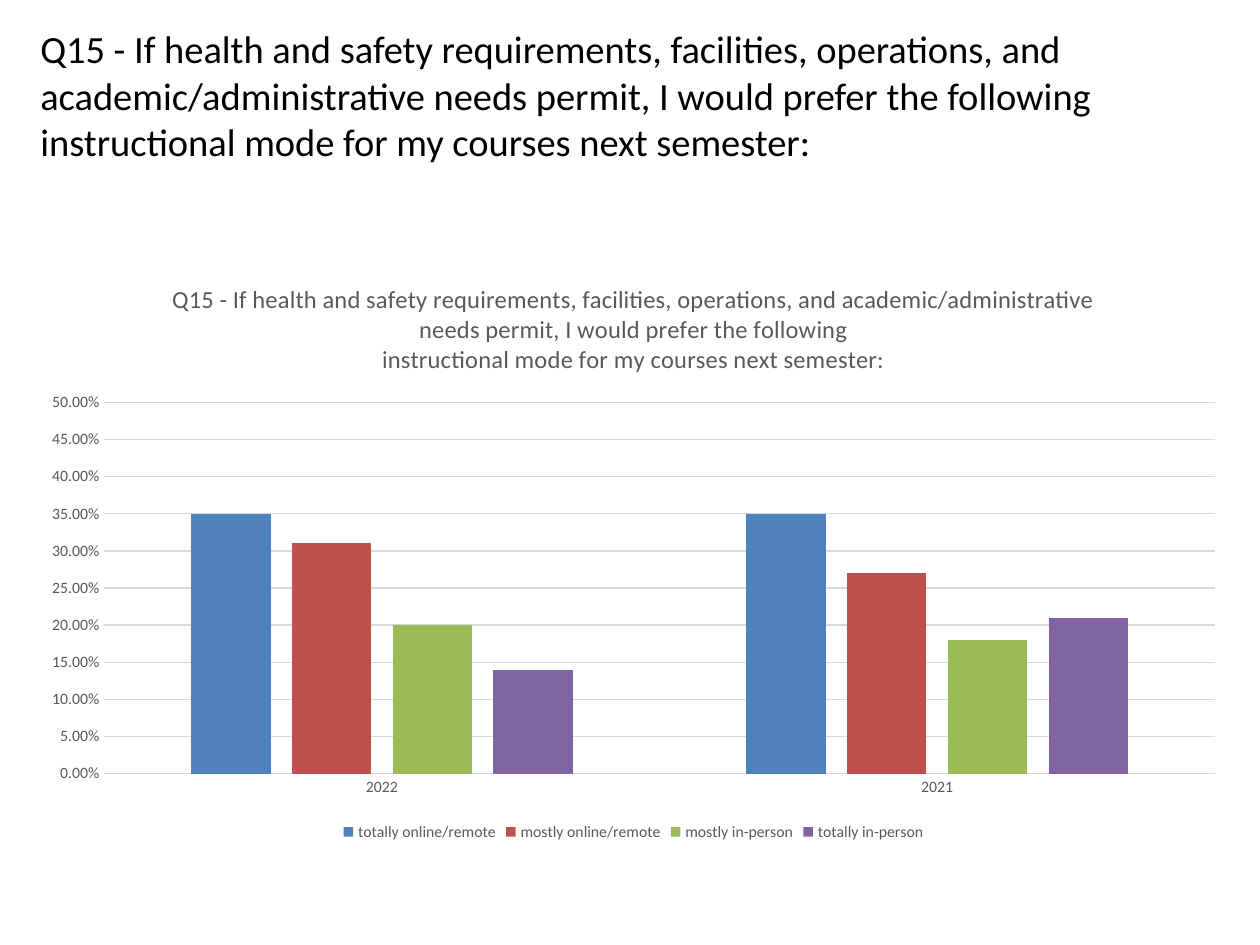
"""Build the slide on preferred instructional mode with its clustered column chart."""
from pptx import Presentation
from pptx.chart.data import CategoryChartData
from pptx.dml.color import RGBColor
from pptx.enum.chart import XL_CHART_TYPE, XL_LEGEND_POSITION, XL_TICK_MARK
from pptx.enum.text import PP_ALIGN
from pptx.util import Pt

QUESTION_START = ("Q15 - If health and safety requirements, facilities, operations, and "
                  "academic/administrative needs permit, I would prefer the following")
QUESTION_END = "instructional mode for my courses next semester:"
YEARS = ["2022", "2021"]
MODES = [
    ("totally online/remote", (0.35, 0.35), "4F81BD"),
    ("mostly online/remote", (0.31, 0.27), "C0504D"),
    ("mostly in-person", (0.2, 0.18), "9BBB59"),
    ("totally in-person", (0.14, 0.21), "8064A2"),
]
FONT, BLACK, GRAY, GRID = "Calibri", "000000", "595959", "D9D9D9"


def color(value):
    return RGBColor.from_string(value)


def style_font(font, size, tone):
    font.name, font.size, font.bold = FONT, Pt(size), False
    font.color.rgb = color(tone)


def style_line(line):
    line.color.rgb = color(GRID)
    line.width = Pt(0.75)


def write(frame, text, size=22, tone=BLACK, align=PP_ALIGN.LEFT):
    frame.word_wrap = True
    for index, words in enumerate(text.split("\n")):
        paragraph = frame.add_paragraph() if index else frame.paragraphs[0]
        paragraph.alignment = align
        run = paragraph.add_run()
        run.text = words
        style_font(run.font, size, tone)


def add_mode_chart(slide):
    results = CategoryChartData(number_format="0.00%")
    results.categories = YEARS
    for mode, shares, _ in MODES:
        results.add_series(mode, shares)
    chart = slide.shapes.add_chart(XL_CHART_TYPE.COLUMN_CLUSTERED, Pt(16), Pt(148.5),
                                   Pt(692), Pt(335), results).chart
    style_font(chart.font, 10, BLACK)
    chart.has_title = True
    write(chart.chart_title.text_frame, f"{QUESTION_START}\n{QUESTION_END}",
          size=14, tone=GRAY, align=PP_ALIGN.CENTER)
    chart.chart_title.include_in_layout = False

    chart.has_legend = True
    chart.legend.position = XL_LEGEND_POSITION.BOTTOM
    chart.legend.include_in_layout = False
    style_font(chart.legend.font, 9, GRAY)

    years, shares = chart.category_axis, chart.value_axis
    for axis in (years, shares):
        axis.major_tick_mark = axis.minor_tick_mark = XL_TICK_MARK.NONE
        style_font(axis.tick_labels.font, 9, GRAY)
    style_line(years.format.line)
    shares.format.line.fill.background()
    shares.minimum_scale, shares.maximum_scale, shares.major_unit = 0, 0.5, 0.05
    shares.tick_labels.number_format = "0.00%"
    shares.tick_labels.number_format_is_linked = False
    style_line(shares.major_gridlines.format.line)

    columns = chart.plots[0]
    columns.gap_width, columns.overlap, columns.vary_by_categories = 219, -27, False
    for series, (_, _, tone) in zip(columns.series, MODES):
        series.format.fill.solid()
        series.format.fill.fore_color.rgb = color(tone)


def main():
    deck = Presentation()
    deck.slide_width, deck.slide_height = Pt(720), Pt(540)
    slide = deck.slides.add_slide(deck.slide_layouts[6])
    question = slide.shapes.add_textbox(Pt(16), Pt(11), Pt(648), Pt(29))
    write(question.text_frame, f"{QUESTION_START} {QUESTION_END}")
    add_mode_chart(slide)
    deck.save("out.pptx")


if __name__ == "__main__":
    main()
